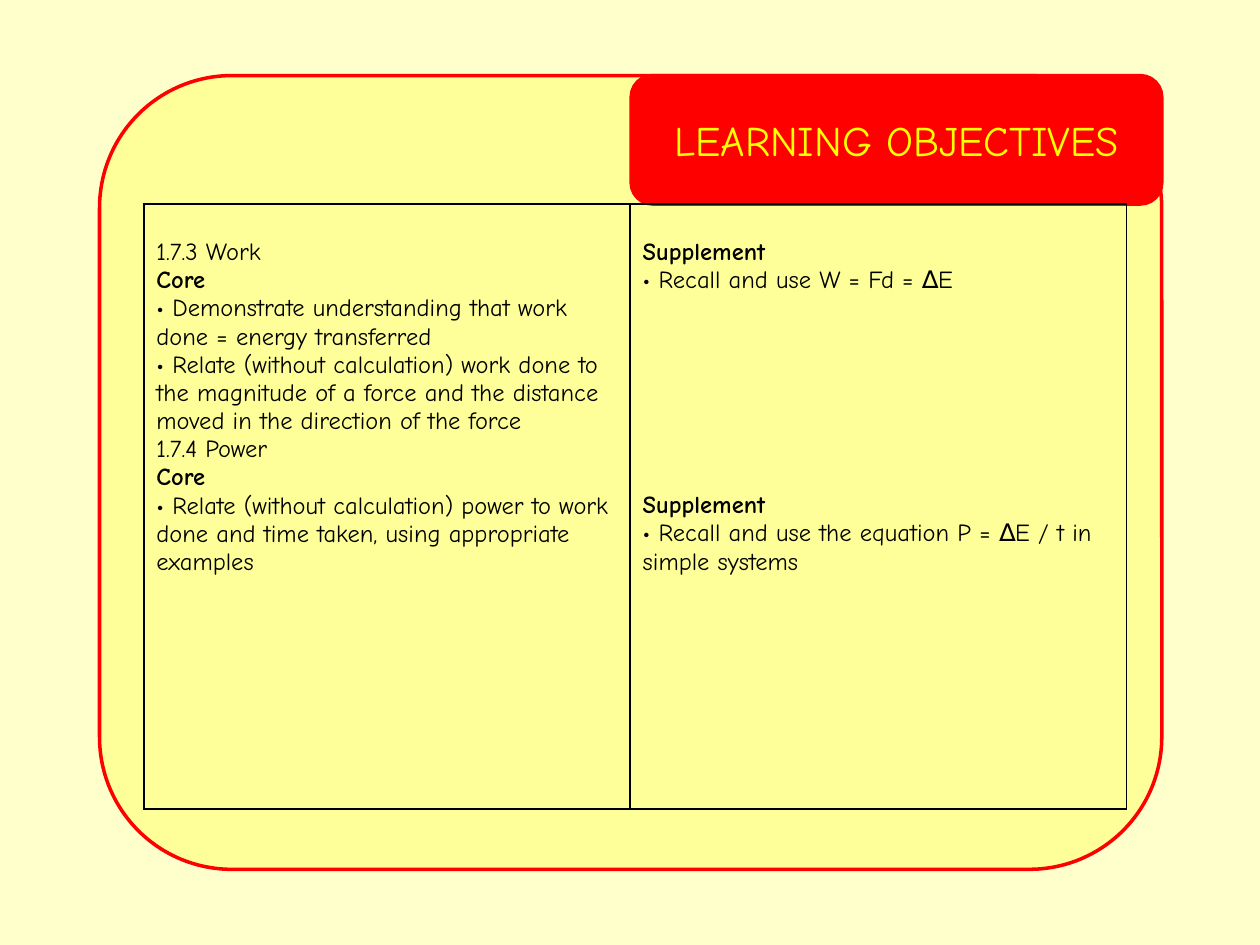
"""Build the learning objectives slide for work and power."""
from lxml import etree
from pptx import Presentation
from pptx.dml.color import RGBColor
from pptx.enum.shapes import MSO_SHAPE
from pptx.enum.text import MSO_ANCHOR, PP_ALIGN
from pptx.oxml.ns import qn
from pptx.util import Pt

RECTANGLE, ROUNDED = MSO_SHAPE.RECTANGLE, MSO_SHAPE.ROUNDED_RECTANGLE
MIDDLE, CENTER, LEFT = MSO_ANCHOR.MIDDLE, PP_ALIGN.CENTER, PP_ALIGN.LEFT

FONT = "Comic Neue"
COLORS = {"page": "FFFFCC", "panel": "FFFF99", "accent": "FF0000",
          "title": "FFFF00", "ink": "000000"}
TITLE = "LEARNING OBJECTIVES"
HEADINGS = ("Core", "Supplement")
LINE_PITCH = 16.07
OBJECTIVES = [
    [
        ("1.7.3 Work", 0),
        ("Core", 0),
        ("• Demonstrate understanding that work done = energy transferred", 0),
        ("• Relate (without calculation) work done to the magnitude of a force "
         "and the distance moved in the direction of the force", 0),
        ("1.7.4 Power", 0),
        ("Core", 0),
        ("• Relate (without calculation) power to work done and time taken, "
         "using appropriate examples", 0),
    ],
    [
        ("Supplement", 0),
        ("• Recall and use W = Fd = ∆E", 0),
        ("Supplement", 7),
        ("• Recall and use the equation P = ∆E / t in simple systems", 0),
    ],
]

SLIDE_W, SLIDE_H = 720, 540
PANEL = (56.9, 43.2, 607, 453.6)
TITLE_W, TITLE_H = 303.2, 73.4
TITLE_BOX = (PANEL[0] + PANEL[2] - TITLE_W, PANEL[1], TITLE_W, TITLE_H)
TABLE_LEFT, TABLE_TOP, TABLE_H = 82.2, 116.6, 345.6
COLUMN_WIDTHS = (277.9, 283.7)
CELL_TOP_MARGIN = 3.6 + LINE_PITCH


def color(name):
    return RGBColor.from_string(COLORS[name])


def write(paragraph, text, size=14, ink="ink", bold=False, align=LEFT, before=0):
    paragraph.alignment = align
    paragraph.space_before = Pt(before)
    run = paragraph.add_run()
    run.text = text
    run.font.name = FONT
    run.font.size = Pt(size)
    run.font.bold = bold
    run.font.color.rgb = color(ink)


def add_block(slide, kind, box, fill, line=None):
    block = slide.shapes.add_shape(kind, *map(Pt, box))
    block.shadow.inherit = False
    block.fill.solid()
    block.fill.fore_color.rgb = color(fill)
    if line:
        block.line.color.rgb = color(line)
        block.line.width = Pt(2)
    else:
        block.line.fill.background()
    return block


def add_borders(cell):
    properties = cell._tc.get_or_add_tcPr()
    for position, side in enumerate(("lnL", "lnR", "lnT", "lnB")):
        border = etree.Element(qn(f"a:{side}"), w=str(Pt(1)))
        fill = etree.SubElement(border, qn("a:solidFill"))
        etree.SubElement(fill, qn("a:srgbClr"), val=COLORS["ink"])
        properties.insert(position, border)


def add_objectives(slide):
    table = slide.shapes.add_table(
        1, len(OBJECTIVES), Pt(TABLE_LEFT), Pt(TABLE_TOP),
        Pt(sum(COLUMN_WIDTHS)), Pt(TABLE_H)).table
    table.first_row = table.horz_banding = False
    for index, (width, entries) in enumerate(zip(COLUMN_WIDTHS, OBJECTIVES)):
        table.columns[index].width = Pt(width)
        cell = table.cell(0, index)
        cell.fill.background()
        cell.margin_top = Pt(CELL_TOP_MARGIN)
        add_borders(cell)
        frame = cell.text_frame
        for number, (text, gap_lines) in enumerate(entries):
            paragraph = frame.add_paragraph() if number else frame.paragraphs[0]
            write(paragraph, text, bold=text in HEADINGS,
                  before=round(gap_lines * LINE_PITCH, 1))


def main():
    deck = Presentation()
    deck.slide_width, deck.slide_height = Pt(SLIDE_W), Pt(SLIDE_H)
    slide = deck.slides.add_slide(deck.slide_layouts[6])
    slide.background.fill.solid()
    slide.background.fill.fore_color.rgb = color("panel")
    add_block(slide, RECTANGLE, (0, 0, SLIDE_W, SLIDE_H), "page")
    add_block(slide, ROUNDED, PANEL, "panel", "accent")
    title = add_block(slide, ROUNDED, TITLE_BOX, "accent", "accent").text_frame
    title.vertical_anchor = MIDDLE
    write(title.paragraphs[0], TITLE, size=24, ink="title", align=CENTER)
    add_objectives(slide)
    deck.save("out.pptx")


if __name__ == "__main__":
    main()
